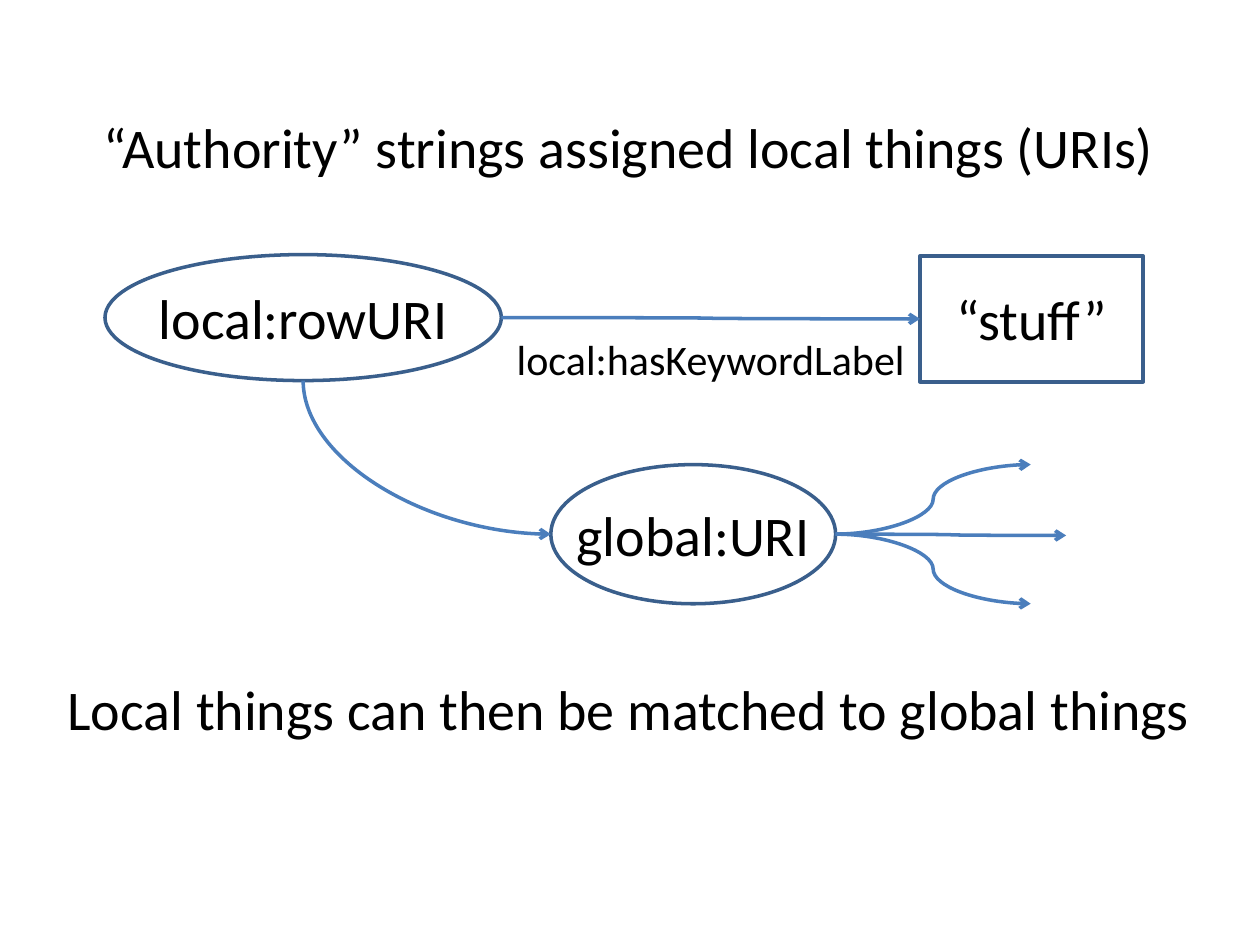
from dataclasses import dataclass

from lxml.etree import SubElement
from pptx import Presentation
from pptx.dml.color import RGBColor
from pptx.enum.shapes import MSO_CONNECTOR, MSO_SHAPE
from pptx.enum.text import MSO_ANCHOR, MSO_AUTO_SIZE, PP_ALIGN
from pptx.oxml.ns import qn
from pptx.util import Pt


@dataclass(frozen=True)
class Theme:
    font: str = "Calibri"
    ink: RGBColor = RGBColor(0, 0, 0)
    outline: RGBColor = RGBColor(0x3A, 0x5F, 0x8C)
    arrow: RGBColor = RGBColor(0x4B, 0x7E, 0xBC)
    body: int = 32
    small: int = 24
    stroke: int = 2


@dataclass(frozen=True)
class Box:
    left: float
    top: float
    width: float
    height: float

    @property
    def middle(self):
        return self.top + self.height / 2

    @property
    def center(self):
        return self.left + self.width / 2

    @property
    def right(self):
        return self.left + self.width

    @property
    def bottom(self):
        return self.top + self.height

    def inner(self, left, top, width, height):
        return Box(self.left + left, self.top + top, width, height)

    def centered(self, width, height):
        return Box(self.center - width / 2, self.middle - height / 2, width, height)

    def lengths(self):
        return Pt(self.left), Pt(self.top), Pt(self.width), Pt(self.height)


THEME = Theme()
LINE_HEIGHT = 46


def write(frame, wording, size):
    frame.word_wrap = False
    frame.auto_size = MSO_AUTO_SIZE.SHAPE_TO_FIT_TEXT
    frame.vertical_anchor = MSO_ANCHOR.TOP
    paragraph = frame.paragraphs[0]
    paragraph.alignment = PP_ALIGN.CENTER
    run = paragraph.add_run()
    run.text = wording
    run.font.name = THEME.font
    run.font.size = Pt(size)
    run.font.color.rgb = THEME.ink


def add_caption(shapes, box, wording, size=THEME.body):
    write(shapes.add_textbox(*box.lengths()).text_frame, wording, size)


def add_node(slide, box, preset, wording, caption_width):
    members = slide.shapes.add_group_shape().shapes
    node = members.add_shape(preset, *box.lengths())
    node.shadow.inherit = False
    node.fill.background()
    node.line.color.rgb = THEME.outline
    node.line.width = Pt(THEME.stroke)
    add_caption(members, box.centered(caption_width, LINE_HEIGHT), wording)


def add_curve(slide, start, end):
    curve = slide.shapes.add_connector(
        MSO_CONNECTOR.CURVE, *(Pt(length) for length in (*start, *end)))
    curve.line.color.rgb = THEME.arrow
    curve.line.width = Pt(THEME.stroke)
    SubElement(curve.line._get_or_add_ln(), qn("a:tailEnd"), type="arrow")
    SubElement(curve._element.spPr, qn("a:effectLst"))
    return curve


def add_quarter_curve(slide, start, end):
    across, down = end[0] - start[0], end[1] - start[1]
    center, middle = start[0] + across / 2, start[1] + down / 2
    curve = add_curve(slide, (center + down / 2, middle - across / 2),
                      (center - down / 2, middle + across / 2))
    properties = curve._element.spPr
    properties.find(qn("a:xfrm")).set("rot", str(270 * 60000))
    properties.find(qn("a:prstGeom")).set("prst", "curvedConnector2")


def build_heading(slide, box, wording):
    heading = slide.shapes.title
    heading.left, heading.top, heading.width, heading.height = box.lengths()
    write(heading.text_frame, wording, THEME.body)


def build_local_statement(slide, box):
    subject = box.inner(0, 0, 226.5, 72)
    literal = box.inner(465.75, 0.75, 127.5, 72)
    add_node(slide, subject, MSO_SHAPE.OVAL, "local:rowURI", 181.5)
    add_node(slide, literal, MSO_SHAPE.RECTANGLE, "“stuff”", 102)
    add_curve(slide, (subject.right, subject.middle), (literal.left, literal.middle))
    predicate = Box(subject.right, box.top + 41.75, literal.left - subject.right, 36)
    add_caption(slide.shapes, predicate, "local:hasKeywordLabel", THEME.small)
    return subject.center, subject.bottom


def build_global_match(slide, box, origin):
    match = box.inner(0, 0, 162.75, box.height)
    add_node(slide, match, MSO_SHAPE.OVAL, "global:URI", 150)
    add_quarter_curve(slide, origin, (match.left, match.middle))
    targets = ((274.25, match.top), (box.width, match.middle + 0.75), (274.25, match.bottom))
    for reach, level in targets:
        add_curve(slide, (match.right, match.middle), (box.left + reach, level))


def main():
    presentation = Presentation()
    presentation.slide_width, presentation.slide_height = Pt(720), Pt(540)
    slide = presentation.slides.add_slide(presentation.slide_layouts[5])
    build_heading(slide, Box(48.75, 60.5, 621.5, LINE_HEIGHT),
                  "“Authority” strings assigned local things (URIs)")
    origin = build_local_statement(slide, Box(60, 145.5, 593.25, 72.75))
    build_global_match(slide, Box(314.75, 265.5, 294.5, 79.5), origin)
    add_caption(slide.shapes, Box(28, 381.75, 663, LINE_HEIGHT),
                "Local things can then be matched to global things")
    presentation.save("out.pptx")


if __name__ == "__main__":
    main()
